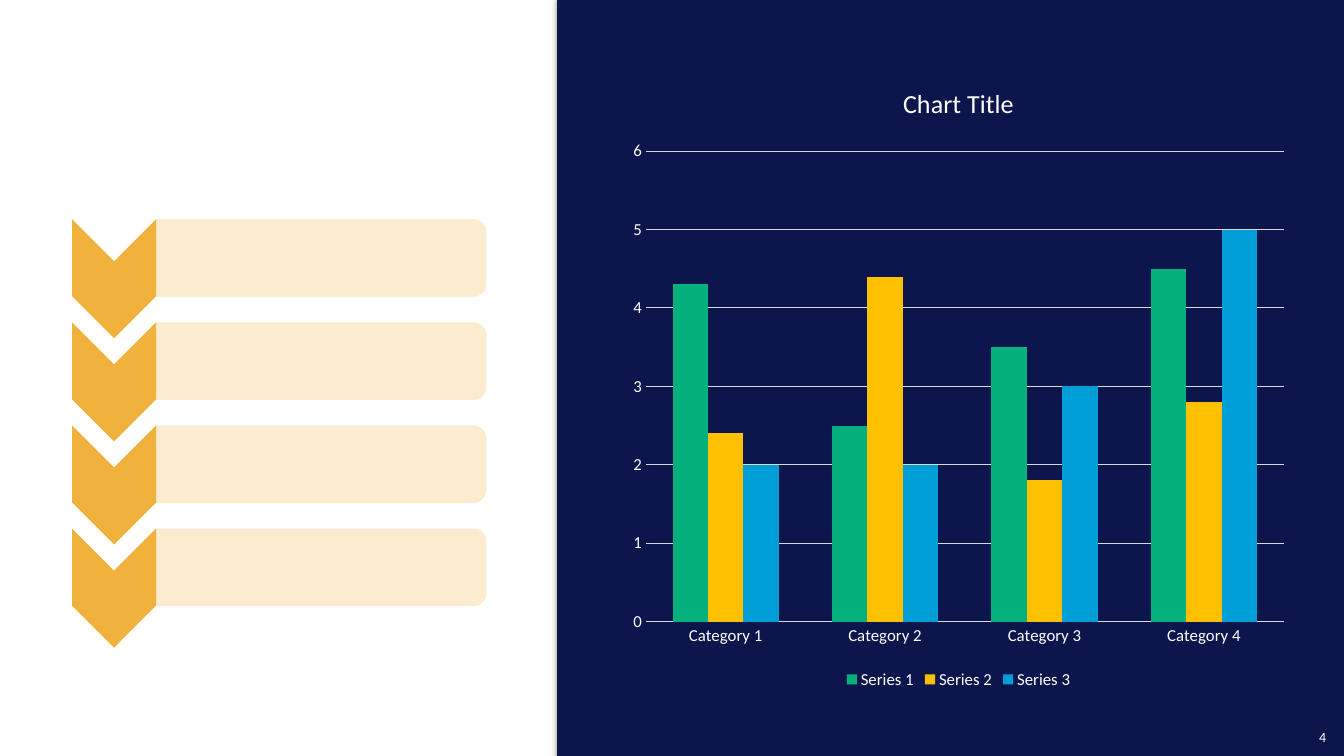
from lxml.etree import SubElement as Sub
from pptx import Presentation
from pptx.chart.data import CategoryChartData as ChartData
from pptx.dml.color import RGBColor as RGB
from pptx.enum.chart import XL_CHART_TYPE as Kind, XL_LEGEND_POSITION as Legend
from pptx.enum.chart import XL_TICK_MARK as Tick
from pptx.enum.shapes import MSO_SHAPE as Shape
from pptx.enum.text import MSO_ANCHOR as Anchor, PP_ALIGN as Align
from pptx.oxml.ns import qn
from pptx.util import Pt

NAVY = RGB(0x0C, 0x16, 0x4C)
WHITE = RGB(0xFF, 0xFF, 0xFF)
BLACK = RGB(0x00, 0x00, 0x00)
GOLD = RGB(0xF1, 0xB1, 0x3D)
GRID = RGB(0xD9, 0xD9, 0xD9)
GREEN = RGB(0x04, 0xB0, 0x7C)
AMBER = RGB(0xFF, 0xC0, 0x00)
BLUE = RGB(0x00, 0x9E, 0xD9)
FACE = "Calibri"

GROUPS = ["Category 1", "Category 2", "Category 3", "Category 4"]
SERIES = [
    ("Series 1", (4.3, 2.5, 3.5, 4.5), GREEN),
    ("Series 2", (2.4, 4.4, 1.8, 2.8), AMBER),
    ("Series 3", (2, 2, 3, 5), BLUE),
]


def style(font, size, color=WHITE):
    font.name, font.size, font.bold = FACE, Pt(size), False
    font.color.rgb = color


def write(frame, text, size=12, color=WHITE, align=Align.CENTER):
    frame.text = text
    para = frame.paragraphs[0]
    para.alignment = align
    style(para.runs[0].font, size, color)


def fade(node, percent):
    Sub(node, qn("a:alpha"), val=str(percent * 1000))


def block(slide, kind, box, color):
    shape = slide.shapes.add_shape(kind, *map(Pt, box))
    shape.shadow.inherit = False
    shape.fill.solid()
    shape.fill.fore_color.rgb = color
    shape.line.fill.background()
    return shape


def turned(slide, kind, box, color):
    """Add a shape that fills the box after a quarter turn."""
    left, top, width, height = box
    shift = (width - height) / 2
    shape = block(slide, kind, (left + shift, top - shift, height, width), color)
    shape.rotation = 90
    return shape


def panel(slide, box):
    shape = block(slide, Shape.RECTANGLE, box, NAVY)
    effects = shape._element.spPr.find(qn("a:effectLst"))
    shadow = Sub(effects, qn("a:outerShdw"), blurRad=str(Pt(4)),
                 dist=str(Pt(3)), dir="5400000", rotWithShape="0")
    fade(Sub(shadow, qn("a:srgbClr"), val=str(BLACK)), 40)


def number(slide, box, text):
    frame = slide.shapes.add_textbox(*map(Pt, box)).text_frame
    frame.word_wrap = True
    frame.vertical_anchor = Anchor.MIDDLE
    frame.margin_left = Pt(7.2)
    frame.margin_right = Pt(3.6)
    write(frame, text, size=10)


def steps(slide, box, count=4):
    left, top, width, height = box
    arrow, tall, bar = 60, 85, 55.4
    pitch = (height - tall) / (count - 1)
    for row in range(count):
        y = top + row * pitch
        turned(slide, Shape.CHEVRON, (left, y, arrow, tall), GOLD)
        strip = turned(slide, Shape.ROUND_2_SAME_RECTANGLE,
                       (left + arrow, y, width - arrow, bar), GOLD)
        fade(strip._element.spPr.find(".//" + qn("a:srgbClr")), 24)


def columns(slide, box):
    data = ChartData()
    data.categories = GROUPS
    for name, values, _ in SERIES:
        data.add_series(name, values)
    chart = slide.shapes.add_chart(
        Kind.COLUMN_CLUSTERED, *map(Pt, box), data).chart
    style(chart.font, 10)
    chart.has_title = True
    write(chart.chart_title.text_frame, "Chart Title", size=18.6)
    chart.chart_title.include_in_layout = False

    plot = chart.plots[0]
    plot.gap_width, plot.overlap, plot.vary_by_categories = 150, 0, False
    for series, (_, _, color) in zip(plot.series, SERIES):
        series.format.fill.solid()
        series.format.fill.fore_color.rgb = color

    for axis in (chart.category_axis, chart.value_axis):
        axis.major_tick_mark = axis.minor_tick_mark = Tick.NONE
        axis.format.line.fill.background()
        style(axis.tick_labels.font, 12)
    scale = chart.value_axis
    scale.minimum_scale, scale.maximum_scale, scale.major_unit = 0, 6, 1
    line = scale.major_gridlines.format.line
    line.color.rgb, line.width = GRID, Pt(0.75)

    chart.has_legend = True
    chart.legend.position = Legend.BOTTOM
    chart.legend.include_in_layout = False
    style(chart.legend.font, 12)


def main():
    deck = Presentation()
    deck.slide_width, deck.slide_height = Pt(960), Pt(540)
    slide = deck.slides.add_slide(deck.slide_layouts[6])
    panel(slide, (398, -3, 563, 545))
    number(slide, (926.6, 508.3, 33, 36), "4")
    steps(slide, (51.5, 156.6, 296, 306))
    columns(slide, (442.8, 44.6, 483.8, 450.7))
    deck.save("out.pptx")


if __name__ == "__main__":
    main()
